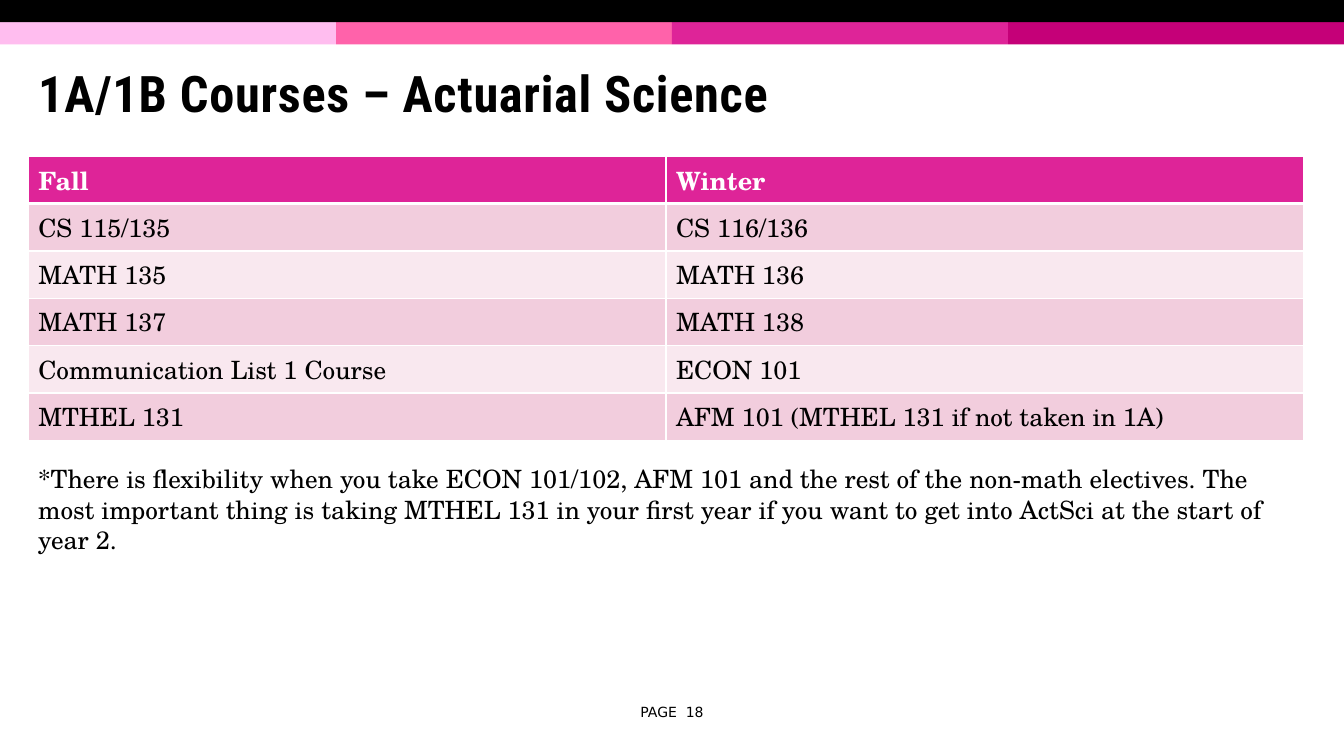
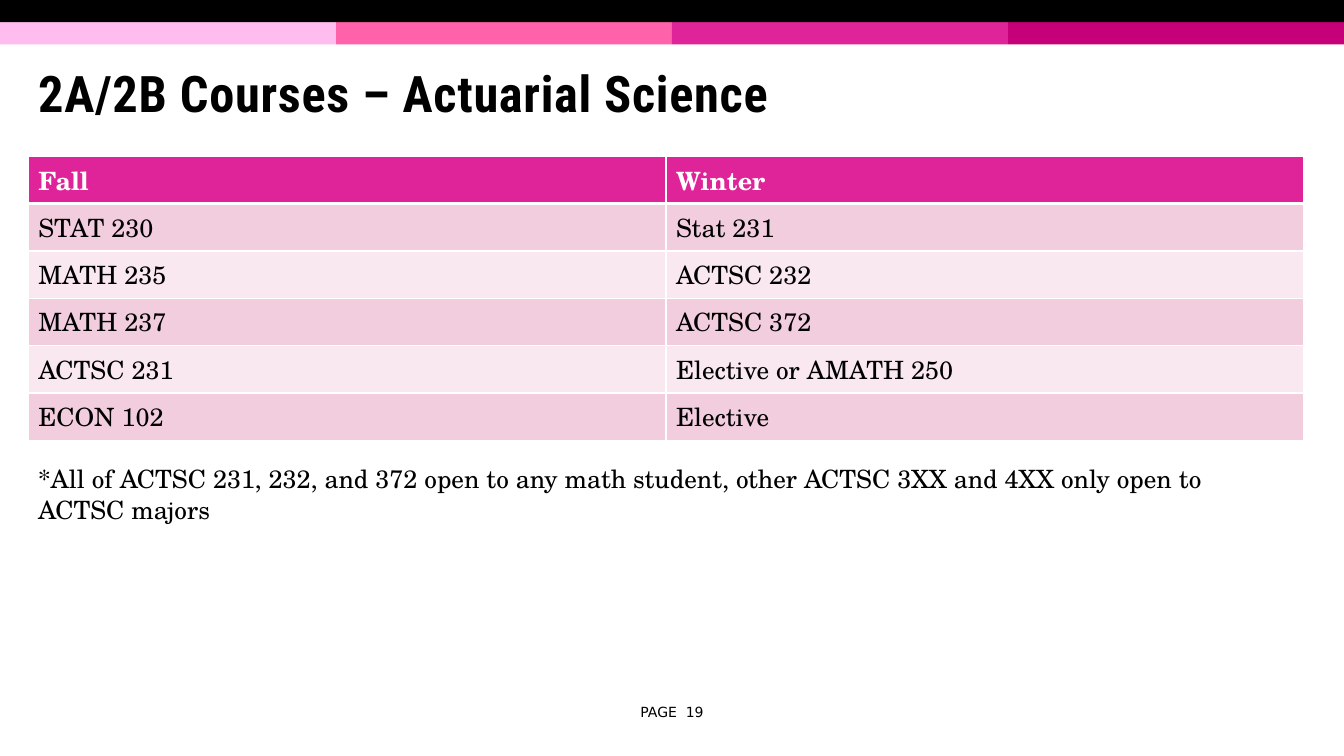
from dataclasses import dataclass

from lxml.etree import SubElement
from pptx import Presentation
from pptx.dml.color import RGBColor
from pptx.enum.shapes import MSO_SHAPE as Preset
from pptx.enum.text import MSO_ANCHOR as Anchor, MSO_AUTO_SIZE as AutoSize, PP_ALIGN as Align
from pptx.oxml.ns import qn
from pptx.slide import Slide
from pptx.table import _Cell as Cell
from pptx.text.text import TextFrame
from pptx.util import Inches, Pt


@dataclass(frozen=True)
class Theme:
    black: str = "000000"
    white: str = "FFFFFF"
    header: str = "DE2498"
    bands: tuple[str, ...] = ("FFBDEF", "FF62AA", "DE2498", "C50078")
    rows: tuple[str, ...] = ("F2CDDD", "F9E8EF")
    title_font: str = "Roboto Condensed"
    body_font: str = "TeX Gyre Schola"
    footer_font: str = "DejaVu Sans"
    title_size: float = 36
    body_size: float = 18
    footer_size: float = 10
    thin_line: float = 1
    thick_line: float = 3


@dataclass(frozen=True)
class Box:
    left: float
    top: float
    width: float
    height: float

    def lengths(self) -> tuple[Inches, ...]:
        return tuple(Inches(n) for n in (self.left, self.top, self.width, self.height))


@dataclass(frozen=True)
class CoursePage:
    title: str
    courses: tuple[tuple[str, str], ...]
    note: str


THEME = Theme()
SLIDE_WIDTH, SLIDE_HEIGHT = 13.33, 7.5
MARGIN = 0.28
CONTENT_WIDTH = 12.65
BAND_HEIGHT = 0.22
ROW_HEIGHT = 0.47
FOOTER_WIDTH = 1.11
FIRST_PAGE = 18
HEADINGS = ("Fall", "Winter")

TITLE_BOX = Box(MARGIN, 0.47, CONTENT_WIDTH, 0.98)
NOTE_BOX = Box(MARGIN, 4.55, CONTENT_WIDTH, 0.71)
FOOTER_BOX = Box((SLIDE_WIDTH - FOOTER_WIDTH) / 2, 6.93, FOOTER_WIDTH, 0.27)
TABLE_TOP = 1.55

PAGES = (
    CoursePage(
        "1A/1B Courses – Actuarial Science",
        (
            ("CS 115/135", "CS 116/136"),
            ("MATH 135", "MATH 136"),
            ("MATH 137", "MATH 138"),
            ("Communication List 1 Course", "ECON 101"),
            ("MTHEL 131", "AFM 101 (MTHEL 131 if not taken in 1A)"),
        ),
        "*There is flexibility when you take ECON 101/102, AFM 101 and the rest of the "
        "non-math electives. The most important thing is taking MTHEL 131 in your first "
        "year if you want to get into ActSci at the start of year 2.",
    ),
    CoursePage(
        "2A/2B Courses – Actuarial Science",
        (
            ("STAT 230", "Stat 231"),
            ("MATH 235", "ACTSC 232"),
            ("MATH 237", "ACTSC 372"),
            ("ACTSC 231", "Elective or AMATH 250"),
            ("ECON 102", "Elective"),
        ),
        "*All of ACTSC 231, 232, and 372 open to any math student, other ACTSC 3XX and "
        "4XX only open to ACTSC majors",
    ),
)


def write_text(frame: TextFrame, text: str, *, font: str = THEME.body_font,
               size: float = THEME.body_size, color: str = THEME.black, bold: bool = False,
               align: Align = Align.LEFT, line_spacing: float = 1.0,
               letter_spacing: float = 0) -> None:
    paragraph = frame.paragraphs[0]
    paragraph.alignment = align
    paragraph.line_spacing = line_spacing
    run = paragraph.add_run()
    run.text = text
    run.font.name = font
    run.font.size = Pt(size)
    run.font.bold = bold
    run.font.color.rgb = RGBColor.from_string(color)
    if letter_spacing:
        run._r.get_or_add_rPr().set("spc", str(round(letter_spacing * 100)))


def add_text_box(slide: Slide, box: Box, anchor: Anchor = Anchor.TOP) -> TextFrame:
    frame = slide.shapes.add_textbox(*box.lengths()).text_frame
    frame.word_wrap = True
    frame.vertical_anchor = anchor
    return frame


def add_band(slide: Slide, box: Box, color: str) -> None:
    shape = slide.shapes.add_shape(Preset.RECTANGLE, *box.lengths())
    shape.shadow.inherit = False
    shape.fill.solid()
    shape.fill.fore_color.rgb = RGBColor.from_string(color)
    shape.line.fill.background()


def add_frame(slide: Slide, title: str, page_number: int) -> None:
    # Coloured bands under a black strip
    band_width = SLIDE_WIDTH / len(THEME.bands)
    for index, color in enumerate(THEME.bands):
        add_band(slide, Box(index * band_width, BAND_HEIGHT, band_width, BAND_HEIGHT), color)
    add_band(slide, Box(0, 0, SLIDE_WIDTH, BAND_HEIGHT), THEME.black)

    # Title and page number
    write_text(add_text_box(slide, TITLE_BOX, Anchor.MIDDLE), title, font=THEME.title_font,
               size=THEME.title_size, bold=True, line_spacing=0.85, letter_spacing=0.5)
    write_text(add_text_box(slide, FOOTER_BOX, Anchor.MIDDLE), f"PAGE  {page_number}",
               font=THEME.footer_font, size=THEME.footer_size, align=Align.CENTER)


def set_borders(cell: Cell, top: float, bottom: float) -> None:
    properties = cell._tc.get_or_add_tcPr()
    widths = {"a:lnL": THEME.thin_line, "a:lnR": THEME.thin_line, "a:lnT": top, "a:lnB": bottom}
    for position, (tag, width) in enumerate(widths.items()):
        line = SubElement(properties, qn(tag), w=str(Pt(width)))
        SubElement(SubElement(line, qn("a:solidFill")), qn("a:srgbClr"), val=THEME.white)
        properties.insert(position, line)


def add_course_table(slide: Slide, courses: tuple[tuple[str, str], ...]) -> None:
    rows = (HEADINGS, *courses)
    box = Box(MARGIN, TABLE_TOP, CONTENT_WIDTH, ROW_HEIGHT * len(rows))
    table = slide.shapes.add_table(len(rows), len(HEADINGS), *box.lengths()).table
    for row_index, texts in enumerate(rows):
        is_header = row_index == 0
        fill = THEME.header if is_header else THEME.rows[(row_index - 1) % len(THEME.rows)]
        for column_index, text in enumerate(texts):
            cell = table.cell(row_index, column_index)
            cell.fill.solid()
            cell.fill.fore_color.rgb = RGBColor.from_string(fill)
            set_borders(cell,
                        top=THEME.thick_line if row_index == 1 else THEME.thin_line,
                        bottom=THEME.thick_line if is_header else THEME.thin_line)
            write_text(cell.text_frame, text, bold=is_header,
                       color=THEME.white if is_header else THEME.black)


def main() -> None:
    presentation = Presentation()
    presentation.slide_width = Inches(SLIDE_WIDTH)
    presentation.slide_height = Inches(SLIDE_HEIGHT)
    blank_layout = presentation.slide_layouts[6]
    for page_number, page in enumerate(PAGES, start=FIRST_PAGE):
        slide = presentation.slides.add_slide(blank_layout)
        add_frame(slide, page.title, page_number)
        add_course_table(slide, page.courses)
        note = add_text_box(slide, NOTE_BOX)
        note.auto_size = AutoSize.SHAPE_TO_FIT_TEXT
        write_text(note, page.note)
    presentation.save("out.pptx")


if __name__ == "__main__":
    main()
